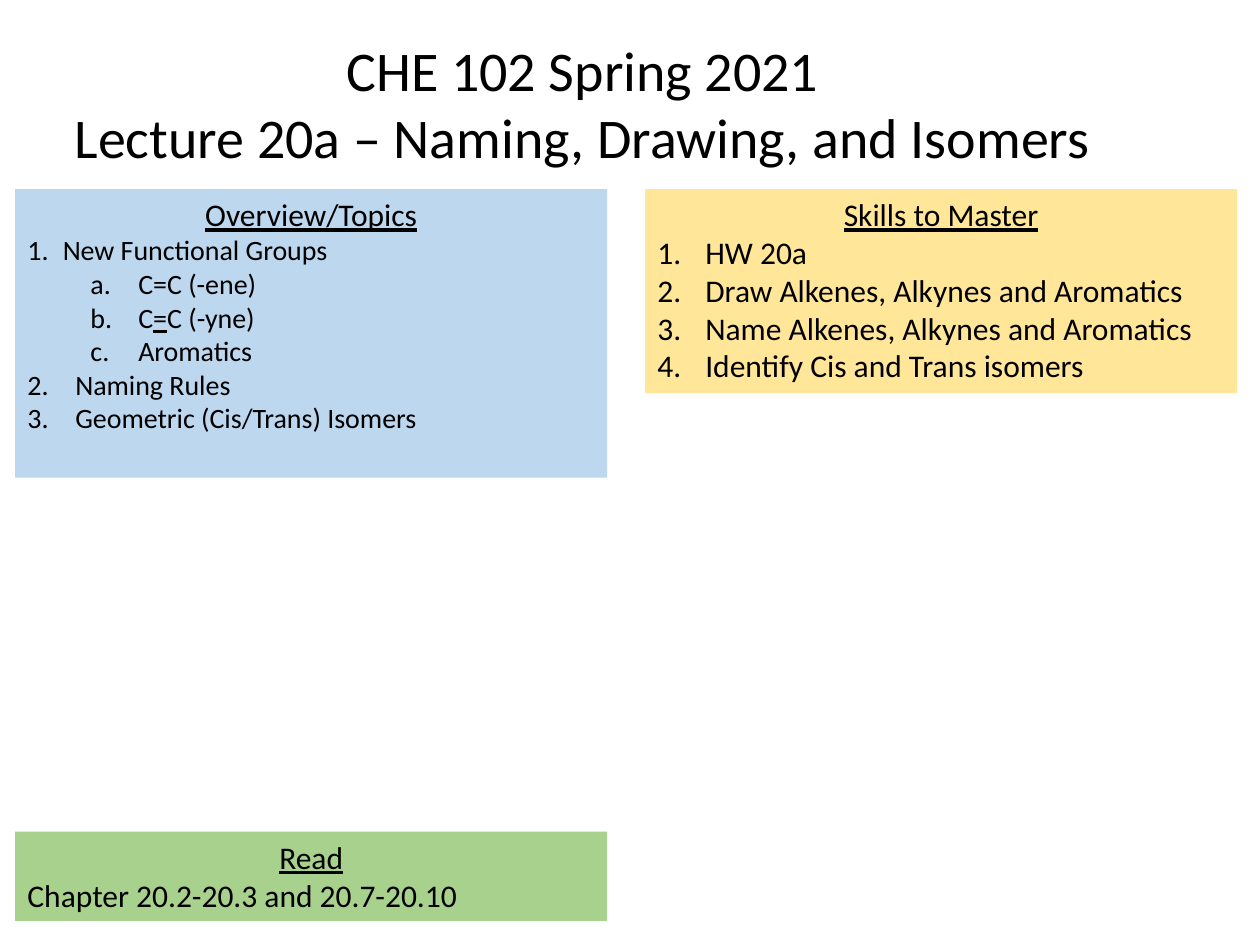
from lxml.etree import SubElement
from pptx import Presentation
from pptx.dml.color import RGBColor
from pptx.enum.text import MSO_AUTO_SIZE, PP_ALIGN
from pptx.oxml.ns import qn
from pptx.util import Inches, Pt

COLORS = {"text": "000000", "topics": "BDD7EE", "skills": "FFE699", "read": "A9D18E"}

# Paragraph formats: outline level, left margin, hanging indent, numbering scheme
FORMATS = {
    "first": (0, 0.28, 0.28, "arabicPeriod"),
    "item": (0, 0.38, 0.38, "arabicPeriod"),
    "subitem": (1, 0.88, 0.38, "alphaLcPeriod"),
}


def write_paragraph(paragraph, runs, size, numbering=None, centered=False):
    """Fill a paragraph from (text, underlined) pairs."""
    if centered:
        paragraph.alignment = PP_ALIGN.CENTER
    if numbering:
        level, margin, hanging, scheme = FORMATS[numbering]
        paragraph.level = level
        properties = paragraph._p.get_or_add_pPr()
        properties.set("marL", str(Inches(margin)))
        properties.set("indent", str(-Inches(hanging)))
        SubElement(properties, qn("a:buFont"), typeface="+mj-lt")
        SubElement(properties, qn("a:buAutoNum"), type=scheme)
    for text, underlined in runs:
        run = paragraph.add_run()
        run.text = text
        font_values = {"name": "Calibri", "size": Pt(size), "underline": underlined}
        for name, value in font_values.items():
            setattr(run.font, name, value)
        run.font.color.rgb = RGBColor.from_string(COLORS["text"])


presentation = Presentation()
presentation.slide_width = Inches(10)
presentation.slide_height = Inches(7.5)
slide = presentation.slides.add_slide(presentation.slide_layouts[6])

# Panels: fill, left, top, height, heading, body size, body paragraphs
panels = [
    ("topics", 0.12, 1.5, 2.29, "Overview/Topics", 16, [
        ("first", [("New Functional Groups", False)]),
        ("subitem", [("C=C (-ene)", False)]),
        ("subitem", [("C", False), ("=", True), ("C (-yne)", False)]),
        ("subitem", [("Aromatics", False)]),
        ("item", [("Naming Rules", False)]),
        ("item", [("Geometric (Cis/Trans) Isomers", False)]),
    ]),
    ("skills", 5.12, 1.5, 1.62, "Skills to Master", 18, [
        ("item", [("HW 20a", False)]),
        ("item", [("Draw Alkenes, Alkynes and Aromatics", False)]),
        ("item", [("Name Alkenes, Alkynes and Aromatics", False)]),
        ("item", [("Identify Cis and Trans isomers", False)]),
    ]),
    ("read", 0.12, 6.6, 0.71, "Read", 18, [
        (None, [("Chapter 20.2-20.3 and 20.7-20.10", False)]),
    ]),
]
for fill, left, top, height, heading, size, body in panels:
    panel = slide.shapes.add_textbox(Inches(left), Inches(top), Inches(4.7), Inches(height))
    panel.fill.solid()
    panel.fill.fore_color.rgb = RGBColor.from_string(COLORS[fill])
    frame = panel.text_frame
    frame.word_wrap = True
    frame.auto_size = MSO_AUTO_SIZE.NONE
    write_paragraph(frame.paragraphs[0], [(heading, True)], 18, centered=True)
    for numbering, runs in body:
        write_paragraph(frame.add_paragraph(), runs, size, numbering)

title = slide.shapes.add_textbox(Inches(0.45), Inches(0.23), Inches(8.35), Inches(1.18))
title.text_frame.word_wrap = False
title.text_frame.auto_size = MSO_AUTO_SIZE.SHAPE_TO_FIT_TEXT
first_line = title.text_frame.paragraphs[0]
second_line = title.text_frame.add_paragraph()
write_paragraph(first_line, [("CHE 102 Spring 2021", False)], 32, centered=True)
write_paragraph(second_line, [("Lecture 20a – Naming, Drawing, and Isomers", False)], 32,
                centered=True)

presentation.save("out.pptx")
